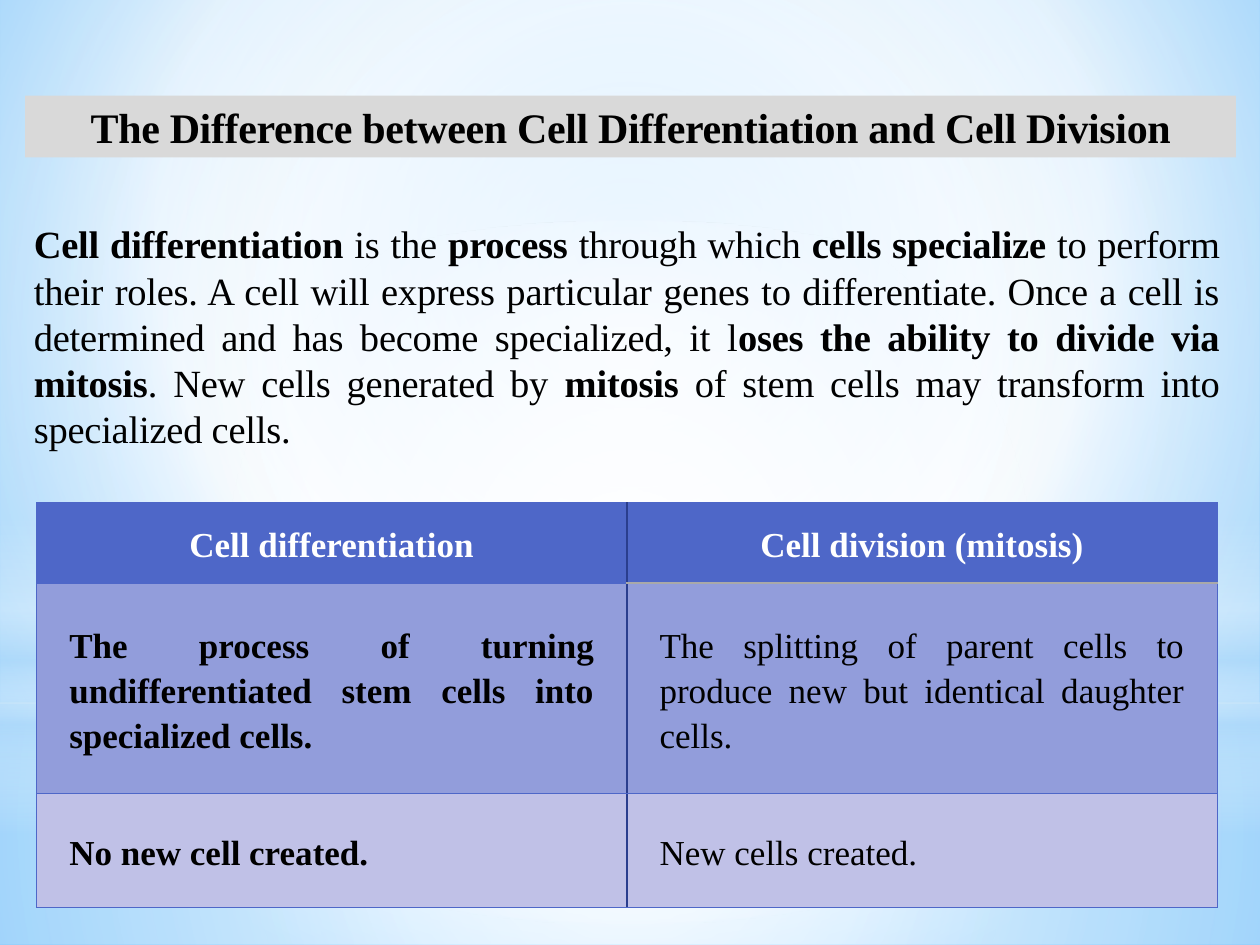
from typing import NamedTuple

from lxml import etree
from pptx import Presentation
from pptx.dml.color import RGBColor
from pptx.enum.shapes import MSO_SHAPE
from pptx.enum.text import MSO_ANCHOR, PP_ALIGN
from pptx.oxml.ns import qn
from pptx.util import Inches, Pt

RECT, OVAL = MSO_SHAPE.RECTANGLE, MSO_SHAPE.OVAL
LEFT, CENTER, JUSTIFY = PP_ALIGN.LEFT, PP_ALIGN.CENTER, PP_ALIGN.JUSTIFY
TOP, MIDDLE = MSO_ANCHOR.TOP, MSO_ANCHOR.MIDDLE
FONT = "Times New Roman"
BLACK, WHITE, BLUE, NAVY, GREY = "000000", "FFFFFF", "4E67C8", "2A3E8E", "A9A9A9"
SKY = "B4DCFA"


class Stop(NamedTuple):
    position: int
    color: str
    opacity: int = 100


class Glow(NamedTuple):
    """A translucent gradient shape of the backdrop."""
    kind: int
    top: float
    height: float
    stops: list
    focus: tuple | None = (50, 50, 50, 50)  # None makes a vertical gradient


class Row(NamedTuple):
    height: float
    fill: str
    color: str
    align: int
    margins: tuple  # horizontal, vertical
    bold: tuple
    texts: tuple


GLOWS = [
    Glow(RECT, 5.58, 1.92, [Stop(0, WHITE, 91), Stop(37, WHITE, 76), Stop(100, SKY, 79)]),
    Glow(RECT, 0, 5.58, [Stop(0, WHITE, 89), Stop(48, WHITE, 62), Stop(100, SKY, 79)]),
    Glow(RECT, 4.12, 2.5, [Stop(0, WHITE, 0), Stop(29, WHITE, 30), Stop(45, SKY, 40),
                           Stop(55, WHITE, 26), Stop(65, SKY, 60), Stop(100, WHITE, 0)], None),
    Glow(OVAL, 1.75, 5.58, [Stop(0, WHITE), Stop(56, WHITE, 0)]),
]

DEFINITION = [
    ("Cell differentiation", True), (" is the ", False), ("process", True),
    (" through which ", False), ("cells specialize", True),
    (" to perform their roles. A cell will express particular genes to differentiate. "
     "Once a cell is determined and has become specialized, it l", False),
    ("oses the ability to divide via mitosis", True),
    (". New cells generated by", False), (" mitosis ", True),
    ("of stem cells may transform into specialized cells.", False),
]

ROWS = [
    Row(0.64, BLUE, WHITE, CENTER, (0.25, 0.12), (True, True),
        ("Cell differentiation", "Cell division (mitosis)")),
    Row(1.67, "929DDB", BLACK, JUSTIFY, (0.26, 0.26), (True, False),
        ("The process of turning undifferentiated stem cells into specialized cells.",
         "The splitting of parent cells to produce new but identical daughter cells.")),
    Row(0.9, "C0C1E7", BLACK, LEFT, (0.26, 0.26), (True, False),
        ("No new cell created.", "New cells created.")),
]


def rgb(color: str) -> RGBColor:
    return RGBColor.from_string(color)


def set_gradient(fill, holder, stops: list, focus: tuple | None) -> None:
    """Give the element that holds the fill a gradient."""
    fill.solid()
    gradient = etree.Element(qn("a:gradFill"), rotWithShape="1")
    stop_list = etree.SubElement(gradient, qn("a:gsLst"))
    for stop in stops:
        mark = etree.SubElement(stop_list, qn("a:gs"), pos=str(stop.position * 1000))
        color = etree.SubElement(mark, qn("a:srgbClr"), val=stop.color)
        if stop.opacity < 100:
            etree.SubElement(color, qn("a:alpha"), val=str(stop.opacity * 1000))
    if focus:
        circle = etree.SubElement(gradient, qn("a:path"), path="circle")
        sides = {side: str(value * 1000) for side, value in zip("ltrb", focus)}
        etree.SubElement(circle, qn("a:fillToRect"), **sides)
    else:
        etree.SubElement(gradient, qn("a:lin"), ang=str(90 * 60000), scaled="0")
    holder.replace(holder.find(qn("a:solidFill")), gradient)


def add_box(slide, kind: int, left: float, top: float, width: float, height: float):
    box = slide.shapes.add_shape(kind, Inches(left), Inches(top), Inches(width), Inches(height))
    box.shadow.inherit = False
    box.line.fill.background()
    return box


def write(frame, runs: list, *, size: float, color: str = BLACK, align: int = LEFT,
          anchor: int = TOP, line_spacing=None, space_after: float = 10,
          tracking: float = 0) -> None:
    """Write one paragraph of (text, bold) runs."""
    frame.word_wrap = True
    frame.vertical_anchor = anchor
    paragraph = frame.paragraphs[0]
    paragraph.alignment = align
    paragraph.line_spacing = line_spacing
    paragraph.space_after = Pt(space_after)
    for text, bold in runs:
        run = paragraph.add_run()
        run.text = text
        run.font.name, run.font.size, run.font.bold = FONT, Pt(size), bold
        run.font.color.rgb = rgb(color)
        if tracking:
            run.font._element.set("spc", str(round(tracking * 100)))


def set_borders(cell, **borders: tuple) -> None:
    """Draw the L, R, T and B borders, each a (colour, points) pair."""
    properties = cell._tc.get_or_add_tcPr()
    for index, side in enumerate("LRTB"):
        color, width = borders[side]
        line = etree.Element(qn(f"a:ln{side}"), w=str(Pt(width)))
        solid = etree.SubElement(line, qn("a:solidFill"))
        etree.SubElement(solid, qn("a:srgbClr"), val=color)
        properties.insert(index, line)


def add_comparison(slide, rows: list) -> None:
    height = sum(row.height for row in rows)
    table = slide.shapes.add_table(len(rows), 2, Inches(0.29), Inches(3.99),
                                   Inches(9.37), Inches(height)).table
    table.first_row = table.horz_banding = False
    thin, divider, rule = (BLUE, 0.75), (NAVY, 1.25), (GREY, 1.25)
    for r, row in enumerate(rows):
        table.rows[r].height = Inches(row.height)
        for c, text in enumerate(row.texts):
            cell = table.cell(r, c)
            cell.fill.solid()
            cell.fill.fore_color.rgb = rgb(row.fill)
            cell.margin_left = cell.margin_right = Inches(row.margins[0])
            cell.margin_top = cell.margin_bottom = Inches(row.margins[1])
            write(cell.text_frame, [(text, row.bold[c])], size=20, color=row.color,
                  align=row.align, line_spacing=1.15, space_after=11.2)
            cell.vertical_anchor = MIDDLE
            set_borders(cell,
                        L=divider if c == 1 else thin,
                        R=divider if c == 0 else thin,
                        T=rule if (r, c) == (1, 1) else thin,
                        B=rule if (r, c) == (0, 1) else thin)


def main() -> None:
    deck = Presentation()
    deck.slide_width, deck.slide_height = Inches(10), Inches(7.5)
    slide = deck.slides.add_slide(deck.slide_layouts[6])

    # Backdrop
    backdrop = slide.background.fill
    backdrop.solid()
    set_gradient(backdrop, slide._element.find(f".//{qn('p:bgPr')}"),
                 [Stop(0, "9ED5FF"), Stop(60, WHITE), Stop(100, "5BB9FF")], (20, 10, 20, 60))
    for glow in GLOWS:
        shape = add_box(slide, glow.kind, 0, glow.top, 10, glow.height)
        set_gradient(shape.fill, shape._element.spPr, glow.stops, glow.focus)

    # Title band
    title = add_box(slide, RECT, 0.2, 0.76, 9.61, 0.49)
    title.fill.solid()
    title.fill.fore_color.rgb = rgb("D9D9D9")
    write(title.text_frame,
          [("The Difference between Cell Differentiation and Cell Division", True)],
          size=24, align=CENTER, line_spacing=Pt(28.3), tracking=-0.2)

    # Definition
    definition = slide.shapes.add_textbox(Inches(0.17), Inches(1.7), Inches(9.61), Inches(1.95))
    write(definition.text_frame, DEFINITION, size=22, align=JUSTIFY, tracking=-0.1)

    # Comparison table
    add_comparison(slide, ROWS)

    deck.save("out.pptx")


if __name__ == "__main__":
    main()
